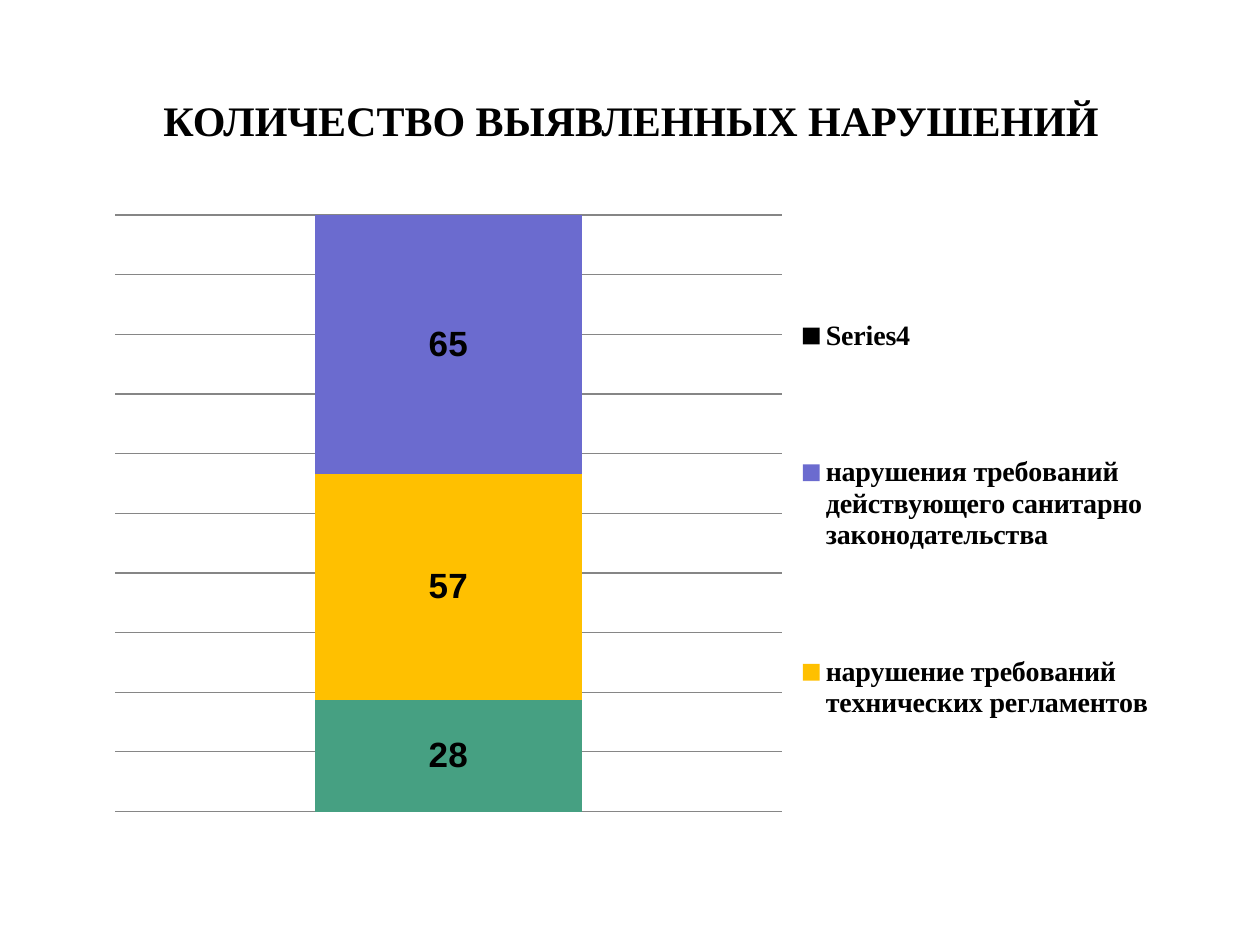
from dataclasses import dataclass

from lxml import etree
from pptx import Presentation
from pptx.chart.data import CategoryChartData
from pptx.dml.color import RGBColor
from pptx.enum.chart import XL_CHART_TYPE as ChartType, XL_LEGEND_POSITION as LegendPos
from pptx.enum.text import MSO_ANCHOR, PP_ALIGN
from pptx.oxml.ns import qn
from pptx.util import Inches, Pt


@dataclass(frozen=True)
class Theme:
    heading_font: str = "Times New Roman"
    body_font: str = "Arial"
    text: RGBColor = RGBColor(0, 0, 0)
    grid: RGBColor = RGBColor(0x86, 0x86, 0x86)
    title_size: int = 24
    label_size: int = 20
    legend_size: int = 16
    base_size: int = 10


THEME = Theme()
LEFT, WIDTH = Inches(0.74), Inches(8.54)

# Series name, value, colour
VIOLATIONS = [
    ("Series 1", 28, "46A082"),
    ("нарушение требований технических регламентов", 57, "FFC000"),
    ("нарушения требований действующего санитарно законодательства", 65, "6B6BCF"),
    ("Series4", None, "000000"),
]


def set_font(font, name, size, bold=False):
    font.name, font.size, font.bold = name, Pt(size), bold
    font.color.rgb = THEME.text


def make_layout(x, y, w, h, inner=False):
    """Manual chart layout in fractions of the chart area."""
    layout = etree.Element(qn("c:layout"))
    manual = etree.SubElement(layout, qn("c:manualLayout"))
    values = [("layoutTarget", "inner")] if inner else []
    values += [("xMode", "edge"), ("yMode", "edge"), ("x", x), ("y", y), ("w", w), ("h", h)]
    for tag, value in values:
        etree.SubElement(manual, qn(f"c:{tag}")).set("val", str(value))
    return layout


def add_title(s, text):
    title = s.shapes.title
    title.left, title.top, title.width, title.height = LEFT, Inches(0.36), WIDTH, Inches(1.18)
    tf = title.text_frame
    tf.vertical_anchor = MSO_ANCHOR.MIDDLE
    p = tf.paragraphs[0]
    p.alignment = PP_ALIGN.CENTER
    r = p.add_run()
    r.text = text
    set_font(r.font, THEME.heading_font, THEME.title_size, True)


def format_axes(chart):
    chart.category_axis.visible = False
    axis = chart.value_axis
    axis.visible = False
    axis.minimum_scale, axis.maximum_scale, axis.major_unit = 0, 1, 0.1
    axis.has_major_gridlines = True
    line = axis.major_gridlines.format.line
    line.color.rgb, line.width = THEME.grid, Pt(0.75)


def format_series(plot):
    plot.gap_width, plot.overlap = 150, 100
    plot.vary_by_categories = False
    for series, (_, value, color) in zip(plot.series, VIOLATIONS):
        series.format.fill.solid()
        series.format.fill.fore_color.rgb = RGBColor.from_string(color)
        if value is not None:
            labels = series.data_labels
            labels.show_value = True
            set_font(labels.font, THEME.body_font, THEME.label_size, True)


def format_legend(chart):
    chart.has_legend = True
    legend = chart.legend
    legend.position = LegendPos.RIGHT
    legend.include_in_layout = False
    set_font(legend.font, THEME.heading_font, THEME.legend_size, True)
    # Hide the first series' entry and place the legend
    entry = etree.Element(qn("c:legendEntry"))
    for tag, value in (("idx", "0"), ("delete", "1")):
        etree.SubElement(entry, qn(f"c:{tag}")).set("val", value)
    xml = chart._chartSpace.find(".//" + qn("c:legend"))
    for old in xml.findall(qn("c:layout")):
        xml.remove(old)
    xml.find(qn("c:legendPos")).addnext(entry)
    entry.addnext(make_layout(0.65, 0.03, 0.34, 0.92))


def add_violations_chart(s):
    data = CategoryChartData()
    data.categories = ["1"]
    for name, value, _ in VIOLATIONS:
        data.add_series(name, [value])
    chart = s.shapes.add_chart(ChartType.COLUMN_STACKED_100, LEFT, Inches(1.55),
                               WIDTH, Inches(5.26), data).chart
    chart.has_title = False
    set_font(chart.font, THEME.body_font, THEME.base_size)
    format_axes(chart)
    format_series(chart.plots[0])
    format_legend(chart)
    area = chart._chartSpace.find(".//" + qn("c:plotArea"))
    for old in area.findall(qn("c:layout")):
        area.remove(old)
    area.insert(0, make_layout(0.02, 0.03, 0.62, 0.9, inner=True))


def main():
    prs = Presentation()
    prs.slide_width, prs.slide_height = Inches(10), Inches(7.5)
    s = prs.slides.add_slide(prs.slide_layouts[5])
    add_title(s, "КОЛИЧЕСТВО ВЫЯВЛЕННЫХ НАРУШЕНИЙ")
    add_violations_chart(s)
    prs.save("out.pptx")


if __name__ == "__main__":
    main()
